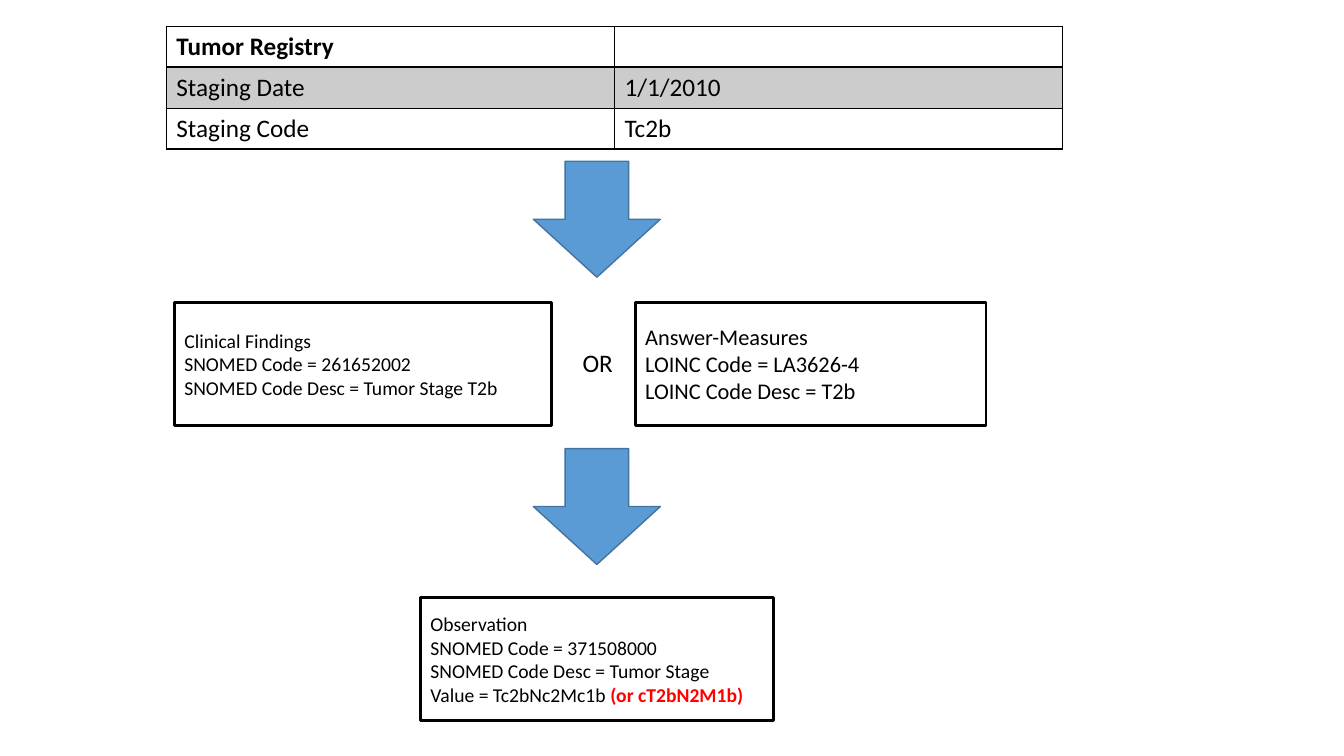
from lxml import etree
from pptx import Presentation
from pptx.dml.color import RGBColor
from pptx.enum.shapes import MSO_SHAPE
from pptx.enum.text import MSO_ANCHOR, MSO_AUTO_SIZE, PP_ALIGN
from pptx.oxml.ns import qn
from pptx.util import Inches, Pt

BLACK = RGBColor(0x00, 0x00, 0x00)
WHITE = RGBColor(0xFF, 0xFF, 0xFF)
GREY = RGBColor(0xCC, 0xCC, 0xCC)
BLUE = RGBColor(0x5B, 0x9B, 0xD5)
DARK_BLUE = RGBColor(0x43, 0x73, 0x9E)
RED = RGBColor(0xFF, 0x00, 0x00)

RECT = MSO_SHAPE.RECTANGLE
DOWN_ARROW = MSO_SHAPE.DOWN_ARROW
MIDDLE = MSO_ANCHOR.MIDDLE
LEFT = PP_ALIGN.LEFT
FIT_SHAPE = MSO_AUTO_SIZE.SHAPE_TO_FIT_TEXT

ARROW_LEFT, ARROW_W, ARROW_H = 5.29, 1.26, 1.15
BOX_H = 1.22
CODES_TOP = 3


class SlideBuilder:
    font = "Calibri"

    def __init__(self, slide):
        self.s = slide

    def style_run(self, r, size, color=BLACK, bold=False):
        r.font.name = self.font
        r.font.size = Pt(size)
        r.font.color.rgb = color
        r.font.bold = bold

    def set_lines(self, tf, lines, size, bold=False):
        tf.text = "\n".join(lines)
        for p in tf.paragraphs:
            p.alignment = LEFT
            for r in p.runs:
                self.style_run(r, size, bold=bold)

    def shape(self, kind, x, y, w, h, fill, line, weight):
        sp = self.s.shapes.add_shape(kind, Inches(x), Inches(y), Inches(w), Inches(h))
        sp.shadow.inherit = False
        sp.fill.solid()
        sp.fill.fore_color.rgb = fill
        sp.line.color.rgb = line
        sp.line.width = Pt(weight)
        return sp

    def arrow(self, y):
        self.shape(DOWN_ARROW, ARROW_LEFT, y, ARROW_W, ARROW_H, BLUE, DARK_BLUE, 1)

    def box(self, x, y, w, lines, size, remark=None):
        """Outlined box of lines; a remark follows the last line in bold red."""
        tf = self.shape(RECT, x, y, w, BOX_H, WHITE, BLACK, 2).text_frame
        tf.word_wrap = True
        tf.vertical_anchor = MIDDLE
        self.set_lines(tf, lines, size)
        if remark:
            r = tf.paragraphs[-1].add_run()
            r.text = remark
            self.style_run(r, size, RED, bold=True)

    def label(self, x, y, w, h, text, size):
        tb = self.s.shapes.add_textbox(Inches(x), Inches(y), Inches(w), Inches(h))
        tf = tb.text_frame
        tf.word_wrap = False
        tf.auto_size = FIT_SHAPE
        self.set_lines(tf, [text], size)

    def cell_borders(self, cell, weights):
        """Draw black borders; weights are points for left, right, top, bottom."""
        tcPr = cell._tc.get_or_add_tcPr()
        for i, (side, weight) in enumerate(zip("LRTB", weights)):
            ln = etree.Element(qn(f"a:ln{side}"), w=str(Pt(weight)))
            fill = etree.SubElement(ln, qn("a:solidFill"))
            etree.SubElement(fill, qn("a:srgbClr"), val=str(BLACK))
            tcPr.insert(i, ln)

    def table(self, x, y, w, h, rows, size):
        frame = self.s.shapes.add_table(len(rows), len(rows[0]), Inches(x),
                                        Inches(y), Inches(w), Inches(h))
        table = frame.table
        table.first_row = table.horz_banding = False
        for i, row in enumerate(rows):
            for j, text in enumerate(row):
                cell = table.cell(i, j)
                self.set_lines(cell.text_frame, [text], size, bold=i == 0)
                if i == 1:
                    cell.fill.solid()
                    cell.fill.fore_color.rgb = GREY
                else:
                    cell.fill.background()
                top, bottom = 2 if i == 1 else 1, 2 if i == 0 else 1
                self.cell_borders(cell, (1, 1, top, bottom))


def main():
    prs = Presentation()
    prs.slide_width, prs.slide_height = Inches(13.33), Inches(7.5)
    b = SlideBuilder(prs.slides.add_slide(prs.slide_layouts[6]))

    b.table(1.65, 0.26, 8.89, 1.22, [
        ("Tumor Registry", ""),
        ("Staging Date", "1/1/2010"),
        ("Staging Code", "Tc2b"),
    ], 18)
    for y in (1.6, 4.45):
        b.arrow(y)

    b.box(1.73, CODES_TOP, 3.74, [
        "Clinical Findings",
        "SNOMED Code = 261652002",
        "SNOMED Code Desc = Tumor Stage T2b",
    ], 14)
    b.label(5.68, 3.4, 0.5, 0.4, "OR", 18)
    b.box(6.3, CODES_TOP, 3.48, [
        "Answer-Measures",
        "LOINC Code = LA3626-4",
        "LOINC Code Desc = T2b",
    ], 16)
    b.box(4.17, 5.93, 3.5, [
        "Observation",
        "SNOMED Code = 371508000",
        "SNOMED Code Desc = Tumor Stage",
        "Value = Tc2bNc2Mc1b ",
    ], 14, remark="(or cT2bN2M1b)")

    prs.save("out.pptx")


if __name__ == "__main__":
    main()
